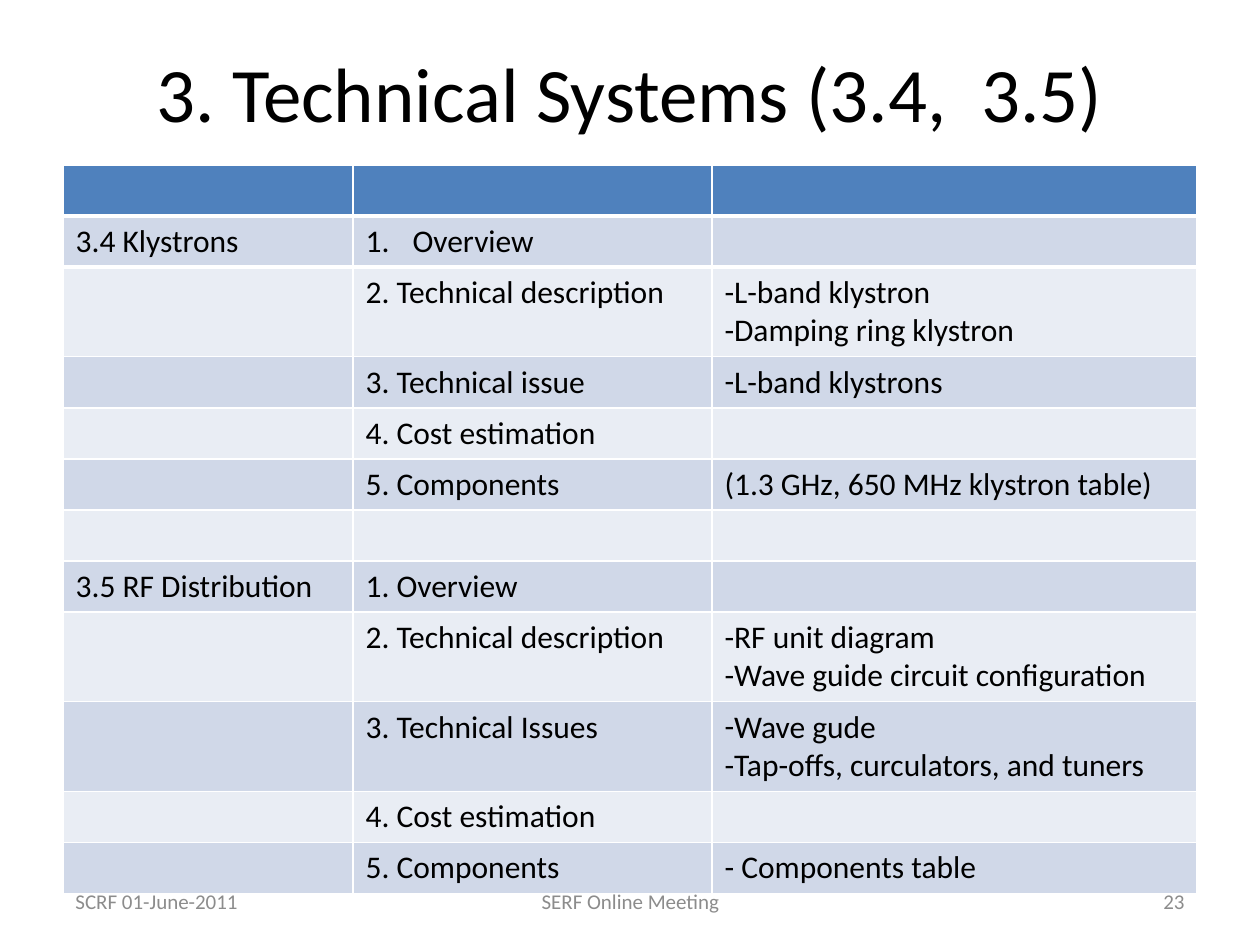
from lxml.etree import Element, SubElement
from pptx import Presentation
from pptx.dml.color import RGBColor
from pptx.enum.text import MSO_ANCHOR as Anchor, PP_ALIGN as Align
from pptx.oxml.ns import qn
from pptx.util import Emu, Pt

PX_PER_INCH = 126
FONT = "Calibri"
COLORS = {
    "text": "000000",
    "footer": "8C8C8C",
    "header": "4F81BD",
    "band_dark": "D0D8E8",
    "band_light": "E9EDF4",
    "border": "FFFFFF",
}

TITLE = "3. Technical Systems (3.4,  3.5)"
COLUMN_WIDTHS = [290, 359, 485]
ROW_HEIGHT = 51
NUMBER_INDENT = 47

# A list in a cell holds dash bullets, a tuple holds numbered items
ROWS = [
    ["", "", ""],
    ["3.4 Klystrons", ("Overview",), ""],
    ["", "2. Technical description", ["L-band klystron", "Damping ring klystron"]],
    ["", "3. Technical issue", ["L-band klystrons"]],
    ["", "4. Cost estimation", ""],
    ["", "5. Components", "(1.3 GHz, 650 MHz klystron table)"],
    ["", "", ""],
    ["3.5 RF Distribution", "1. Overview", ""],
    ["", "2. Technical description",
     ["RF unit diagram", "Wave guide circuit configuration"]],
    ["", "3. Technical Issues", ["Wave gude", "Tap-offs, curculators, and tuners"]],
    ["", "4. Cost estimation", ""],
    ["", "5. Components", "- Components table"],
]

# Left, width, alignment, text
FOOTERS = [
    (63, 294, Align.LEFT, "SCRF 01-June-2011"),
    (431, 399, Align.CENTER, "SERF Online Meeting"),
    (903, 294, Align.RIGHT, "23"),
]


def px(length):
    return Emu(length * 914400 // PX_PER_INCH)


def color(name):
    return RGBColor.from_string(COLORS[name])


def write(paragraph, text, size, color_name, align=Align.LEFT):
    paragraph.alignment = align
    run = paragraph.add_run()
    run.text = text
    run.font.name = FONT
    run.font.size = Pt(size)
    run.font.color.rgb = color(color_name)


def add_dash(paragraph):
    properties = paragraph._p.get_or_add_pPr()
    SubElement(properties, qn("a:buFont"), typeface=FONT)
    SubElement(properties, qn("a:buChar"), char="-")


def add_number(paragraph):
    properties = paragraph._p.get_or_add_pPr()
    properties.set("marL", str(px(NUMBER_INDENT)))
    properties.set("indent", str(-px(NUMBER_INDENT)))
    SubElement(properties, qn("a:buFont"), typeface="+mj-lt")
    SubElement(properties, qn("a:buAutoNum"), type="arabicPeriod")


def set_border(cell, side, width):
    line = Element(qn(f"a:ln{side}"), w=str(Pt(width)))
    fill = SubElement(line, qn("a:solidFill"))
    SubElement(fill, qn("a:srgbClr"), val=COLORS["border"])
    cell._tc.get_or_add_tcPr().insert(0, line)


def set_title(slide):
    title = slide.shapes.title
    title.left, title.top, title.width, title.height = map(px, (63, 38, 1134, 108))
    title.text_frame.vertical_anchor = Anchor.MIDDLE
    write(title.text_frame.paragraphs[0], TITLE, 44, "text", Align.CENTER)


def fill_cell(cell, content, fill_name):
    cell.fill.solid()
    cell.fill.fore_color.rgb = color(fill_name)
    if not content:
        return
    lines = [content] if isinstance(content, str) else content
    frame = cell.text_frame
    for index, line in enumerate(lines):
        paragraph = frame.add_paragraph() if index else frame.paragraphs[0]
        write(paragraph, line, 18, "text")
        if isinstance(content, list):
            add_dash(paragraph)
        elif isinstance(content, tuple):
            add_number(paragraph)


def add_systems_table(slide):
    # The default table style supplies the thin white borders
    table = slide.shapes.add_table(
        len(ROWS), len(COLUMN_WIDTHS), px(63), px(165),
        px(sum(COLUMN_WIDTHS)), px(ROW_HEIGHT * len(ROWS))).table
    for column, width in zip(table.columns, COLUMN_WIDTHS):
        column.width = px(width)
    for row_index, contents in enumerate(ROWS):
        table.rows[row_index].height = px(ROW_HEIGHT)
        band = "band_dark" if row_index % 2 else "band_light"
        fill_name = band if row_index else "header"
        for column_index, content in enumerate(contents):
            fill_cell(table.cell(row_index, column_index), content, fill_name)

    # Thick rule between the header and the body
    for column_index in range(len(COLUMN_WIDTHS)):
        set_border(table.cell(0, column_index), "B", 3)
        set_border(table.cell(1, column_index), "T", 3)


def add_footer(slide, left, width, align, text):
    box = slide.shapes.add_textbox(px(left), px(876), px(width), px(50))
    frame = box.text_frame
    frame.word_wrap = True
    frame.vertical_anchor = Anchor.MIDDLE
    write(frame.paragraphs[0], text, 12, "footer", align)


def main():
    presentation = Presentation()
    presentation.slide_width = px(1260)
    presentation.slide_height = px(945)
    slide = presentation.slides.add_slide(presentation.slide_layouts[5])

    set_title(slide)
    add_systems_table(slide)
    for footer in FOOTERS:
        add_footer(slide, *footer)

    presentation.save("out.pptx")


if __name__ == "__main__":
    main()
